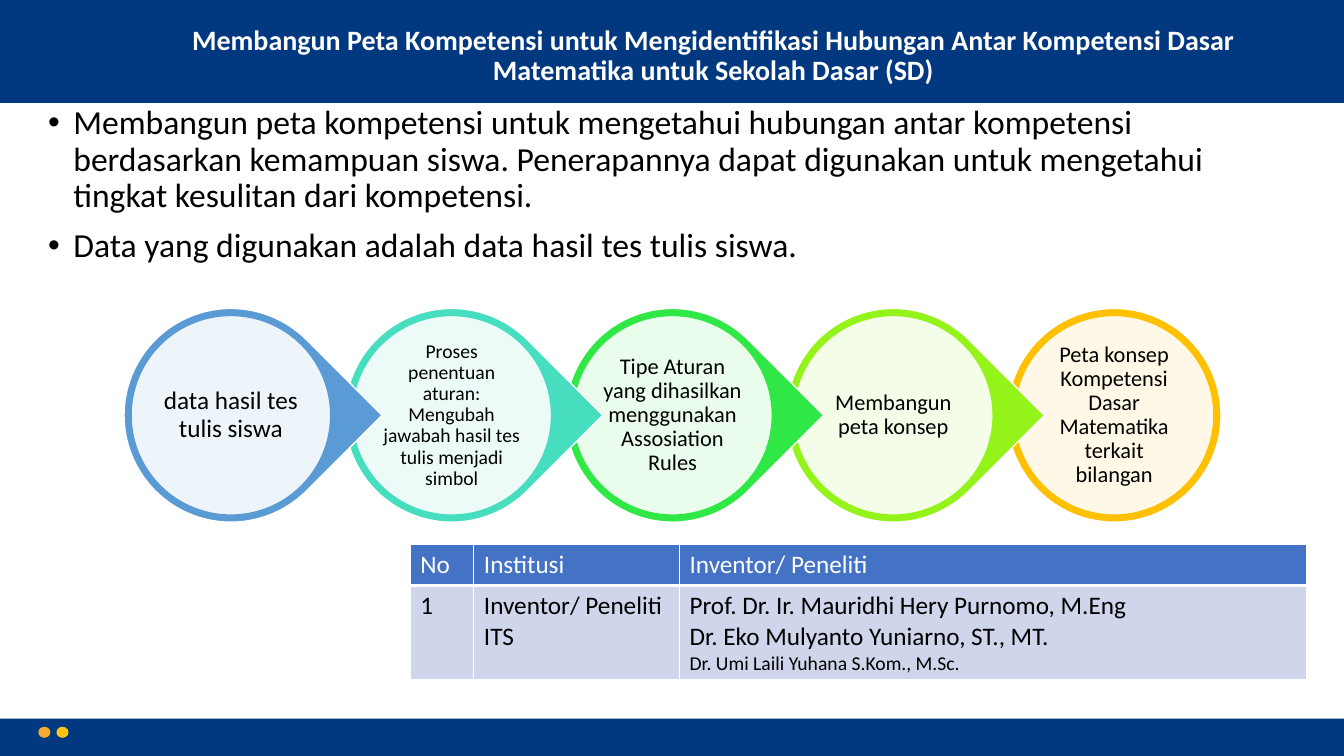
from dataclasses import dataclass

from lxml import etree
from pptx import Presentation
from pptx.dml.color import RGBColor
from pptx.enum.shapes import MSO_SHAPE
from pptx.enum.text import MSO_ANCHOR, PP_ALIGN
from pptx.oxml.ns import qn
from pptx.util import Pt

PX = 9144
FONT = "Calibri"
WHITE, BLACK, NAVY = "FFFFFF", "000000", "013880"
HEADER_BLUE, ROW_BLUE = "4472C4", "CFD5EA"
RECT, ELLIPSE, TEARDROP = MSO_SHAPE.RECTANGLE, MSO_SHAPE.OVAL, MSO_SHAPE.TEAR
LEFT, CENTER = PP_ALIGN.LEFT, PP_ALIGN.CENTER
TOP, MIDDLE, BOTTOM = MSO_ANCHOR.TOP, MSO_ANCHOR.MIDDLE, MSO_ANCHOR.BOTTOM

STEP_LEFT, STEP_TOP, STEP_PITCH, STEP_SIZE = 123, 306, 219, 212
DISC_INSET, LABEL_INSET = 7, 35


@dataclass
class Box:
    x: int
    y: int
    w: int
    h: int

    def emu(self) -> tuple[int, int, int, int]:
        return self.x * PX, self.y * PX, self.w * PX, self.h * PX

    def inset(self, d: int) -> "Box":
        return Box(self.x + d, self.y + d, self.w - 2 * d, self.h - 2 * d)


@dataclass
class Step:
    text: str
    color: str
    size: int = 16
    kind: MSO_SHAPE = TEARDROP


@dataclass
class Row:
    cells: list[str]
    height: int
    fill: str
    color: str
    bottom_line: int


TITLE = ("Membangun Peta Kompetensi untuk Mengidentifikasi Hubungan Antar "
         "Kompetensi Dasar Matematika untuk Sekolah Dasar (SD)")
BULLETS = [
    "Membangun peta kompetensi untuk mengetahui hubungan antar kompetensi "
    "berdasarkan kemampuan siswa. Penerapannya dapat digunakan untuk "
    "mengetahui tingkat kesulitan dari kompetensi.",
    "Data yang digunakan adalah data hasil tes tulis siswa.",
]
STEPS = [
    Step("data hasil tes tulis siswa", "5B9BD5", 18),
    Step("Proses penentuan aturan: Mengubah jawabah hasil tes tulis menjadi simbol",
         "46DEBF", 14),
    Step("Tipe Aturan yang dihasilkan menggunakan Assosiation Rules", "30E845"),
    Step("Membangun peta konsep", "94F319"),
    Step("Peta konsep Kompetensi Dasar Matematika terkait bilangan",
         "FFC000", kind=ELLIPSE),
]
COLUMNS = [63, 204, 622]
ROWS = [
    Row(["No", "Institusi", "Inventor/ Peneliti"], 41, HEADER_BLUE, WHITE, 3),
    Row(["1", "Inventor/ Peneliti ITS",
         "Prof. Dr. Ir. Mauridhi Hery Purnomo, M.Eng\n"
         "Dr. Eko Mulyanto Yuniarno, ST., MT.\n"
         "Dr. Umi Laili Yuhana S.Kom., M.Sc."], 92, ROW_BLUE, BLACK, 1),
]


def rgb(color: str) -> RGBColor:
    return RGBColor.from_string(color)


def style_runs(p, size: int, color: str, bold: bool = False) -> None:
    for r in p.runs:
        r.font.name = FONT
        r.font.size = Pt(size)
        r.font.bold = bold
        r.font.color.rgb = rgb(color)


def add_shape(s, kind: MSO_SHAPE, box: Box, fill: str, line: str = ""):
    sp = s.shapes.add_shape(kind, *box.emu())
    sp.shadow.inherit = False
    sp.fill.solid()
    sp.fill.fore_color.rgb = rgb(fill)
    if line:
        sp.line.color.rgb = rgb(line)
        sp.line.width = Pt(1)
    else:
        sp.line.fill.background()
    return sp


def add_text(s, box: Box, lines: list[str], size: int, color: str,
             align: PP_ALIGN, anchor: MSO_ANCHOR, bold: bool = False):
    tf = s.shapes.add_textbox(*box.emu()).text_frame
    tf.word_wrap = True
    tf.vertical_anchor = anchor
    tf.text = "\n".join(lines)
    for p in tf.paragraphs:
        p.alignment = align
        p.line_spacing = 0.9
        style_runs(p, size, color, bold)
    return tf


def add_bullets(s) -> None:
    tf = add_text(s, Box(38, 100, 1256, 587), BULLETS, 24, BLACK, LEFT, TOP)
    for i, p in enumerate(tf.paragraphs):
        pPr = p._p.get_or_add_pPr()
        pPr.set("marL", str(25 * PX))
        pPr.set("indent", str(-25 * PX))
        etree.SubElement(pPr, qn("a:buFont")).set("typeface", "Arial")
        etree.SubElement(pPr, qn("a:buChar")).set("char", "•")
        if i:
            p.space_before = Pt(10)


def add_step(s, index: int, step: Step) -> None:
    box = Box(STEP_LEFT + index * STEP_PITCH, STEP_TOP, STEP_SIZE, STEP_SIZE)
    outer = add_shape(s, step.kind, box, step.color, WHITE)
    if step.kind == TEARDROP:
        outer.rotation = 45
        outer.adjustments[0] = 1
    disc = add_shape(s, ELLIPSE, box.inset(DISC_INSET), WHITE, step.color)
    white = disc._element.spPr.find(qn("a:solidFill"))[0]
    etree.SubElement(white, qn("a:alpha")).set("val", "90000")
    tf = add_text(s, box.inset(LABEL_INSET), [step.text], step.size, BLACK,
                  CENTER, MIDDLE)
    tf.margin_left = tf.margin_right = tf.margin_top = tf.margin_bottom = 2 * PX


def add_borders(cell, bottom_line: int) -> None:
    tcPr = cell._tc.get_or_add_tcPr()
    for side, width in zip("LRTB", (1, 1, 1, bottom_line)):
        ln = etree.SubElement(tcPr, qn(f"a:ln{side}"), w=str(Pt(width)))
        fill = etree.SubElement(ln, qn("a:solidFill"))
        etree.SubElement(fill, qn("a:srgbClr")).set("val", WHITE)


def add_inventors(s) -> None:
    box = Box(407, 540, sum(COLUMNS), sum(row.height for row in ROWS))
    table = s.shapes.add_table(len(ROWS), len(COLUMNS), *box.emu()).table
    table.first_row = table.horz_banding = False
    for column, width in zip(table.columns, COLUMNS):
        column.width = width * PX
    for i, row in enumerate(ROWS):
        table.rows[i].height = row.height * PX
        for j, text in enumerate(row.cells):
            cell = table.cell(i, j)
            add_borders(cell, row.bottom_line)
            cell.fill.solid()
            cell.fill.fore_color.rgb = rgb(row.fill)
            cell.text_frame.text = text
            for k, p in enumerate(cell.text_frame.paragraphs):
                style_runs(p, 18 if k < 2 else 14, row.color)


def main() -> None:
    prs = Presentation()
    prs.slide_width, prs.slide_height = 1333 * PX, 750 * PX
    s = prs.slides.add_slide(prs.slide_layouts[6])
    add_shape(s, RECT, Box(0, 0, 1333, 102), NAVY)
    add_shape(s, RECT, Box(0, 713, 1333, 37), NAVY)
    add_text(s, Box(128, 16, 1159, 75), [TITLE], 20, WHITE, CENTER, BOTTOM, True)
    for x, color in ((38, "F5AA2D"), (56, "FFC411")):
        add_shape(s, ELLIPSE, Box(x, 721, 12, 11), color)
    add_bullets(s)
    add_inventors(s)
    for index, step in reversed(list(enumerate(STEPS))):
        add_step(s, index, step)
    prs.save("out.pptx")


if __name__ == "__main__":
    main()
